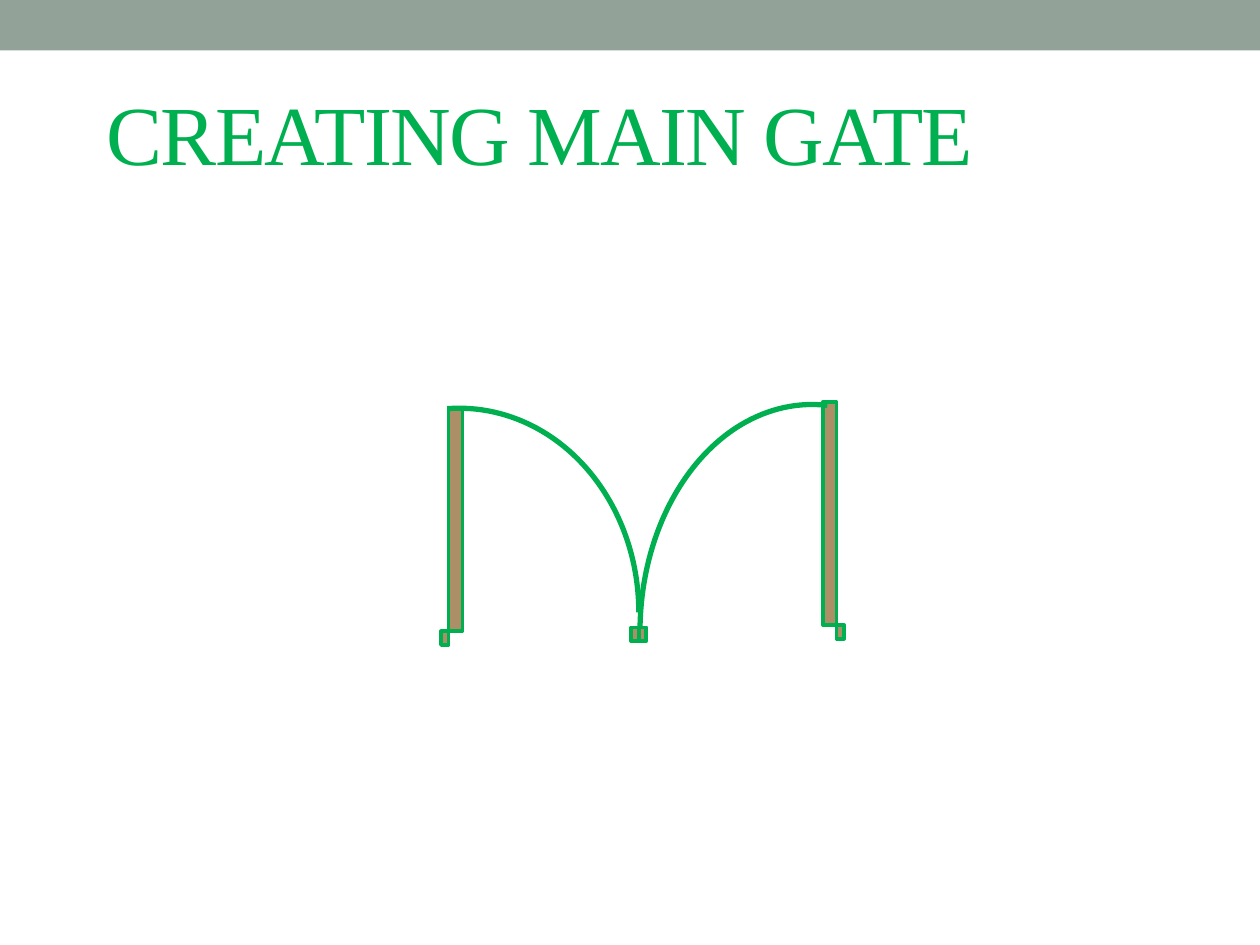
"""Build the slide that shows a main gate drawn with posts, feet and arcs."""
from pptx import Presentation
from pptx.dml.color import RGBColor
from pptx.enum.shapes import MSO_SHAPE as Shape
from pptx.enum.text import MSO_ANCHOR as Anchor, MSO_AUTO_SIZE as AutoSize, PP_ALIGN as Align
from pptx.util import Inches, Pt

GREEN = RGBColor(0x00, 0xB0, 0x50)
WOOD = RGBColor(0xAD, 0x8F, 0x67)
SAGE = RGBColor(0x93, 0xA2, 0x99)
POST_WIDTH, POST_HEIGHT = 0.11, 1.77
FOOT_WIDTH, FOOT_HEIGHT = 0.06, 0.11
LEFT_POST, LEFT_TOP = 3.56, 3.24
RIGHT_POST, RIGHT_TOP = 6.53, 3.19
MIDDLE, MIDDLE_TOP = 5.07, 4.98

deck = Presentation()
deck.slide_width, deck.slide_height = Inches(10), Inches(7.5)
page = deck.slides.add_slide(deck.slide_layouts[5])


def add_part(kind, left, top, width, height, fill=None, line_width=None):
    part = page.shapes.add_shape(kind, Inches(left), Inches(top), Inches(width), Inches(height))
    part.shadow.inherit = False
    if fill is None:
        part.fill.background()
    else:
        part.fill.solid()
        part.fill.fore_color.rgb = fill
    if line_width is None:
        part.line.fill.background()
    else:
        part.line.color.rgb = GREEN
        part.line.width = Pt(line_width)
    return part


add_part(Shape.RECTANGLE, 0, 0, 10, 0.4, fill=SAGE)

posts = [(LEFT_POST, LEFT_TOP), (RIGHT_POST, RIGHT_TOP)]
feet = [
    (LEFT_POST - FOOT_WIDTH, LEFT_TOP + POST_HEIGHT),
    (MIDDLE - FOOT_WIDTH, MIDDLE_TOP),
    (MIDDLE, MIDDLE_TOP),
    (RIGHT_POST + POST_WIDTH, RIGHT_TOP + POST_HEIGHT),
]
for places, width, height in [(posts, POST_WIDTH, POST_HEIGHT), (feet, FOOT_WIDTH, FOOT_HEIGHT)]:
    for left, top in places:
        add_part(Shape.RECTANGLE, left, top, width, height, fill=WOOD, line_width=2.08)

arcs = [
    (2.22, 3.24, 2.85, 3.24, 0, 159.96, 0),
    (4.64, 3.65, 3.61, 2.73, 270, 162.91, 2.33),
]
for left, top, width, height, rotation, start, end in arcs:
    arc = add_part(Shape.ARC, left, top, width, height, line_width=3)
    arc.rotation = rotation
    arc.adjustments[0], arc.adjustments[1] = start, end

title = page.shapes.title
title.left, title.top, title.width, title.height = map(Inches, (0.12, 0.54, 8.33, 0.58))
frame = title.text_frame
frame.text = "CREATING MAIN GATE"
frame.auto_size = AutoSize.NONE
frame.word_wrap = True
frame.vertical_anchor = Anchor.TOP
frame.margin_top = Inches(0.11)
para = frame.paragraphs[0]
para.alignment = Align.CENTER
span = para.runs[0]
span.font.name = "Times New Roman"
span.font.size = Pt(48)
span.font.color.rgb = GREEN
span.font._element.set("spc", "-100")

deck.save("out.pptx")
